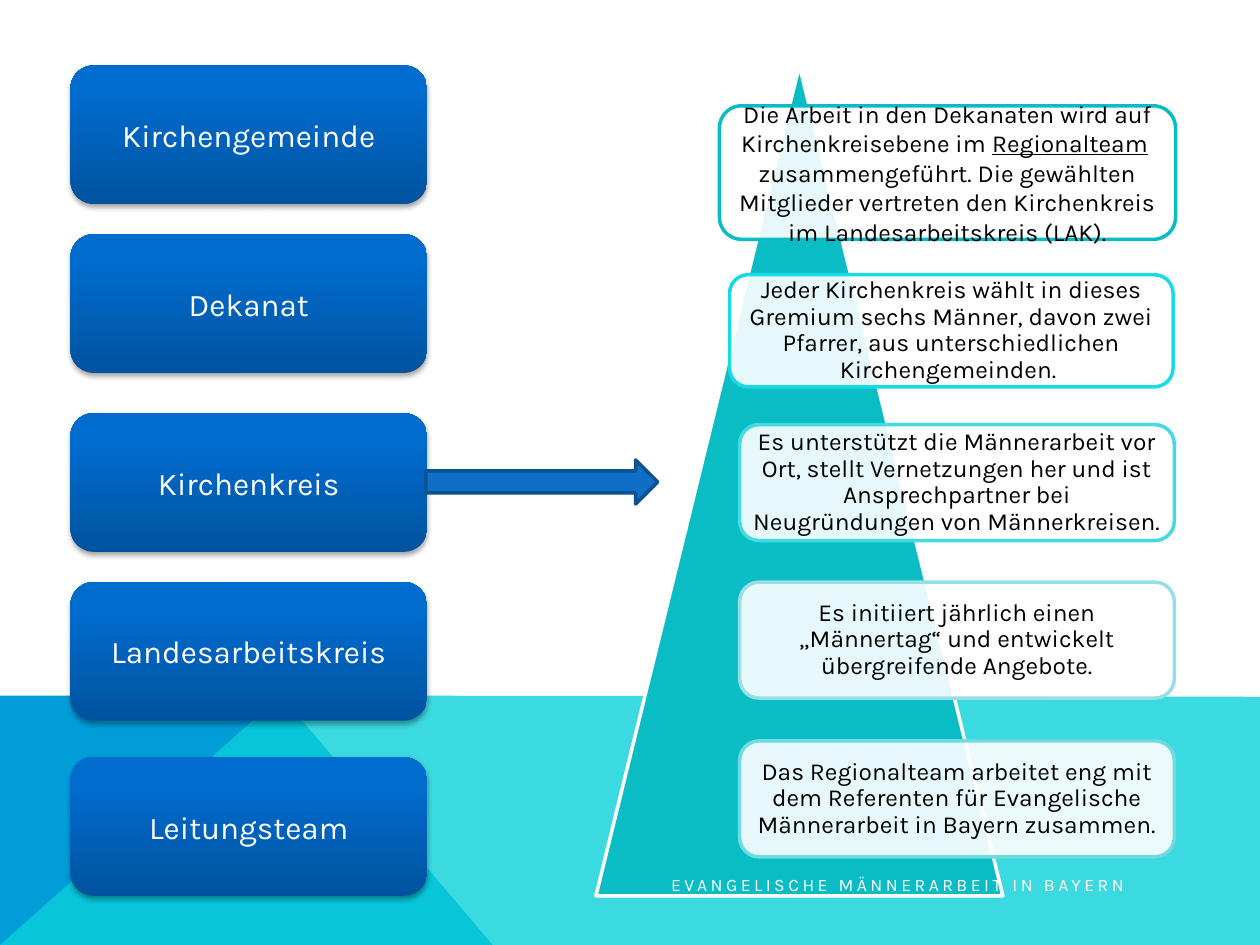
import copy
from dataclasses import dataclass

import lxml.etree
import pptx
import pptx.dml.color
import pptx.enum.shapes
import pptx.enum.text
import pptx.oxml
import pptx.oxml.ns
import pptx.util

Inches, Pt = pptx.util.Inches, pptx.util.Pt
SHAPES = pptx.enum.shapes.MSO_SHAPE
ALIGN = pptx.enum.text.PP_ALIGN
qn = pptx.oxml.ns.qn


@dataclass
class Theme:
    font: str = "Karla"
    white: str = "FFFFFF"
    black: str = "000000"
    blue: str = "009DD9"
    aqua: str = "0BD0D9"
    teal: str = "0ABDC5"
    arrow: str = "0F6FC6"
    arrow_edge: str = "0B5292"
    gradient: tuple = ((0, "00539F"), (0.8, "006CCE"), (1, "006DCF"))
    level_size: int = 18
    card_size: int = 14
    footer_size: int = 10
    line_width: int = 2


theme = Theme()


def paint(shape, fill, edge=None, opacity=100):
    """Flat fill, optional outline, no shadow."""
    shape.shadow.inherit = False
    shape.fill.solid()
    shape.fill.fore_color.rgb = pptx.dml.color.RGBColor.from_string(fill)
    if opacity < 100:
        color = shape._element.spPr.find(qn("a:solidFill"))[0]
        lxml.etree.SubElement(color, qn("a:alpha"), val=str(opacity * 1000))
    if edge:
        shape.line.color.rgb = pptx.dml.color.RGBColor.from_string(edge)
        shape.line.width = Pt(theme.line_width)
    else:
        shape.line.fill.background()


def write(shape, paragraphs, size, color, align=ALIGN.CENTER, spacing=None):
    """Fill a shape with paragraphs, each a list of (text, underlined) runs."""
    frame = shape.text_frame
    frame.word_wrap = True
    frame.vertical_anchor = pptx.enum.text.MSO_ANCHOR.MIDDLE
    for index, runs in enumerate(paragraphs):
        para = frame.add_paragraph() if index else frame.paragraphs[0]
        para.alignment = align
        if spacing:
            para.line_spacing = spacing
        for text, underlined in runs:
            span = para.add_run()
            span.text = text
            span.font.name = theme.font
            span.font.size = Pt(size)
            span.font.color.rgb = pptx.dml.color.RGBColor.from_string(color)
            if underlined:
                span.font.underline = True


deck = pptx.Presentation()
deck.slide_width, deck.slide_height = Inches(10), Inches(7.5)
page = deck.slides.add_slide(deck.slide_layouts[6])

# Background bands
bands = [
    (theme.blue, 100, [(0, 7.5), (0, 5.52), (2.23, 5.52), (3.91, 7.5)]),
    (theme.aqua, 80, [(0, 7.5), (2.23, 5.52), (10, 5.53), (10, 7.5)]),
]
for color, opacity, corners in bands:
    points = [(Inches(x), Inches(y)) for x, y in corners]
    builder = page.shapes.build_freeform(*points[0])
    builder.add_line_segments(points[1:], close=True)
    paint(builder.convert_to_shape(), color, opacity=opacity)

# Levels of the organisation
levels = [
    ("Kirchengemeinde", 0.52),
    ("Dekanat", 1.86),
    ("Kirchenkreis", 3.28),
    ("Landesarbeitskreis", 4.62),
    ("Leitungsteam", 6.01),
]
for name, top in levels:
    box = page.shapes.add_shape(SHAPES.ROUNDED_RECTANGLE, Inches(0.56),
                                Inches(top), Inches(2.83), Inches(1.1))
    box.line.fill.background()
    box.fill.gradient()
    box.fill.gradient_angle = 90
    stop_list = box._element.spPr.find(qn("a:gradFill")).find(qn("a:gsLst"))
    stop_list.append(copy.deepcopy(stop_list[-1]))
    for stop, (position, color) in zip(box.fill.gradient_stops, theme.gradient):
        stop.position = position
        stop.color.rgb = pptx.dml.color.RGBColor.from_string(color)
    box.shadow.inherit = False
    shadow = lxml.etree.SubElement(
        box._element.spPr.find(qn("a:effectLst")), qn("a:outerShdw"),
        blurRad=str(Pt(3.1)), dist=str(Pt(1.8)), dir="5400000", rotWithShape="0")
    shade = lxml.etree.SubElement(shadow, qn("a:srgbClr"), val=theme.black)
    lxml.etree.SubElement(shade, qn("a:alpha"), val="35000")
    write(box, [[(name, False)]], theme.level_size, theme.white)

# Pyramid
pyramid = page.shapes.add_shape(SHAPES.ISOSCELES_TRIANGLE, Inches(4.73),
                                Inches(0.52), Inches(3.23), Inches(6.59))
paint(pyramid, theme.teal, theme.white)

# Cards: left, top, width, height, outline, line spacing, paragraphs
cards = [
    (5.71, 0.84, 3.62, 1.06, theme.teal, None, [
        [("Die Arbeit in den Dekanaten wird auf Kirchenkreisebene im ", False),
         ("Regionalteam", True), (" ", False)],
        [("zusammengeführt. Die gewählten Mitglieder vertreten den "
          "Kirchenkreis im Landesarbeitskreis (LAK).", False)]]),
    (5.79, 2.18, 3.52, 0.89, "16DAE5", 0.9, [
        [("Jeder Kirchenkreis wählt in dieses Gremium sechs Männer, davon zwei "
          "Pfarrer, aus unterschiedlichen Kirchengemeinden. ", False)]]),
    (5.87, 3.37, 3.45, 0.92, "42DBE4", 0.9, [
        [("Es unterstützt die Männerarbeit vor Ort, stellt Vernetzungen her und "
          "ist Ansprechpartner bei Neugründungen von Männerkreisen. ", False)]]),
    (5.87, 5.88, 3.45, 0.92, "6EDBE3", 0.9, [
        [("Das Regionalteam arbeitet eng mit dem Referenten für Evangelische "
          "Männerarbeit in Bayern zusammen.", False)]]),
    (5.87, 4.62, 3.45, 0.92, "97DFE5", 0.9, [
        [("Es initiiert jährlich einen „Männertag“ und entwickelt "
          "übergreifende Angebote.", False)]]),
]
for left, top, width, height, edge, spacing, paragraphs in cards:
    card = page.shapes.add_shape(SHAPES.ROUNDED_RECTANGLE, Inches(left),
                                 Inches(top), Inches(width), Inches(height))
    paint(card, theme.white, edge, opacity=90)
    inset = height / 21
    label = page.shapes.add_textbox(
        Inches(left + inset), Inches(top + inset),
        Inches(width - 2 * inset), Inches(height - 2 * inset))
    frame = label.text_frame
    frame.margin_left = frame.margin_right = Inches(0.06)
    frame.margin_top = frame.margin_bottom = Inches(0.06)
    write(label, paragraphs, theme.card_size, theme.black, spacing=spacing)

# Arrow from Kirchenkreis to the pyramid
arrow = page.shapes.add_shape(SHAPES.RIGHT_ARROW, Inches(3.38), Inches(3.65),
                              Inches(1.84), Inches(0.35))
paint(arrow, theme.arrow, theme.arrow_edge)

# Footer with wide letter spacing
footer = page.shapes.add_textbox(Inches(3.85), Inches(6.87), Inches(5.17), Inches(0.3))
write(footer, [[("EVANGELISCHE MÄNNERARBEIT IN BAYERN", False)]],
      theme.footer_size, theme.white, ALIGN.RIGHT)
footer.text_frame.paragraphs[0].runs[0].font._element.set("spc", "200")

deck.save("out.pptx")
